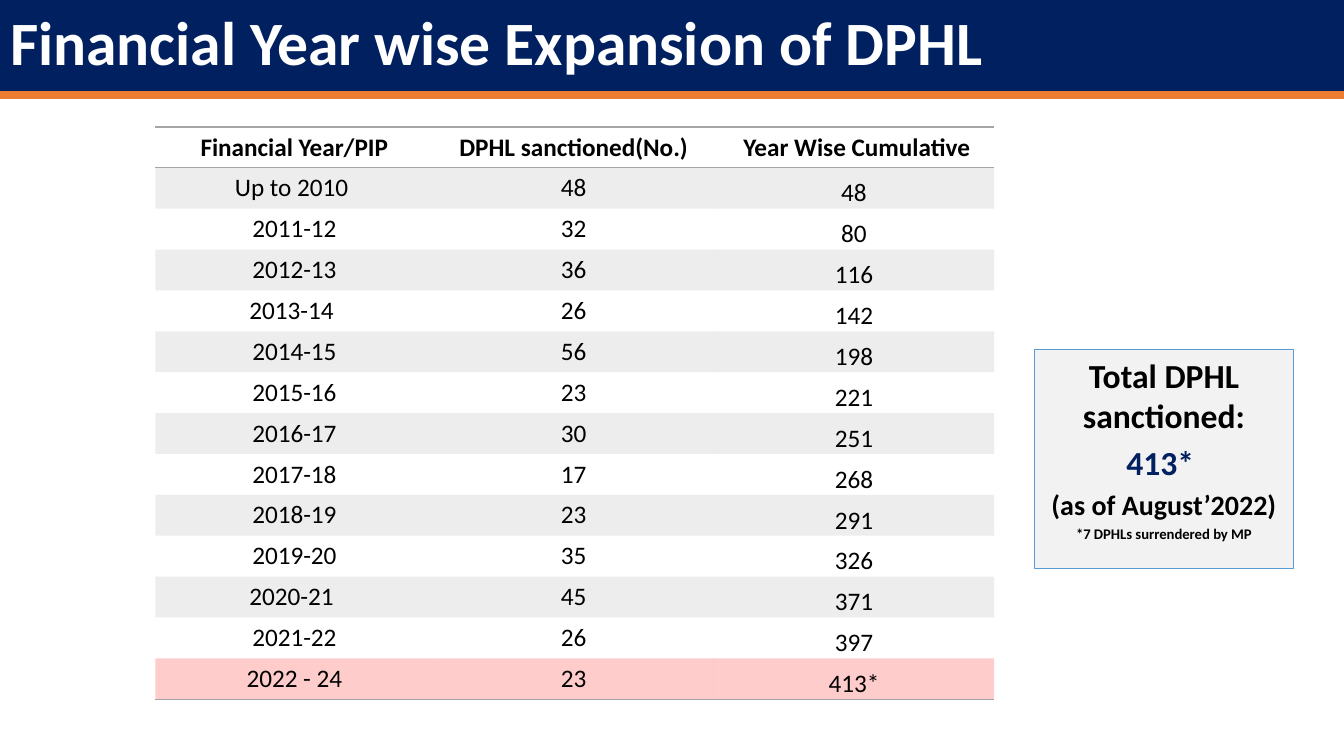
from lxml import etree
from pptx import Presentation
from pptx import util as u
from pptx.dml.color import RGBColor
from pptx.enum import shapes, text
from pptx.oxml.ns import qn

NAVY = RGBColor(0x00, 0x20, 0x60)
ORANGE = RGBColor(0xED, 0x7D, 0x31)
GREY = RGBColor(0xA5, 0xA5, 0xA5)
RED = RGBColor(0xFF, 0x00, 0x00)
PALE = RGBColor(0xF2, 0xF2, 0xF2)
BLUE = RGBColor(0x5B, 0x9B, 0xD5)
BLACK = RGBColor(0x00, 0x00, 0x00)
WHITE = RGBColor(0xFF, 0xFF, 0xFF)
PLAIN_TABLE_STYLE = "{2D5ABB26-0587-4C30-8999-92F81FD0307C}"


def write(para, words, size=18, color=BLACK, bold=False, align=text.PP_ALIGN.CENTER):
    para.alignment = align
    span = para.add_run()
    span.text = words
    span.font.name = "Calibri"
    span.font.size = u.Pt(size)
    span.font.bold = bold
    span.font.color.rgb = color


def add_border(cell, side):
    line = etree.Element(qn(f"a:{side}"), w=str(u.Pt(1)))
    fill = etree.SubElement(line, qn("a:solidFill"))
    etree.SubElement(fill, qn("a:srgbClr"), val=str(GREY))
    properties = cell._tc.get_or_add_tcPr()
    position = len(properties.findall(qn("a:lnT")))
    properties.insert(position, line)


deck = Presentation()
deck.slide_width = u.Inches(13.33)
deck.slide_height = u.Inches(7.5)
page = deck.slides.add_slide(deck.slide_layouts[5])

stripe = page.shapes.add_shape(
    shapes.MSO_SHAPE.RECTANGLE, 0, u.Inches(0.91), deck.slide_width, u.Inches(0.07))
stripe.shadow.inherit = False
stripe.fill.solid()
stripe.fill.fore_color.rgb = ORANGE
stripe.line.color.rgb = ORANGE
stripe.line.width = u.Pt(1)

title = page.shapes.title
title.left, title.top = 0, 0
title.width, title.height = u.Inches(13.48), u.Inches(0.91)
title.fill.solid()
title.fill.fore_color.rgb = NAVY
title.text_frame.vertical_anchor = text.MSO_ANCHOR.MIDDLE
title.text_frame.auto_size = text.MSO_AUTO_SIZE.NONE
heading = title.text_frame.paragraphs[0]
heading.line_spacing = 0.9
write(heading, "Financial Year wise Expansion of DPHL", size=44, color=WHITE,
      bold=True, align=text.PP_ALIGN.LEFT)

rows = [
    ("Financial Year/PIP", "DPHL sanctioned(No.)", " Year Wise Cumulative"),
    ("Up to 2010 ", "48", "48"),
    ("2011-12", "32", "80"),
    ("2012-13", "36", "116"),
    ("2013-14 ", "26", "142"),
    ("2014-15", "56", "198"),
    ("2015-16", "23", "221"),
    ("2016-17", "30", "251"),
    ("2017-18", "17", "268"),
    ("2018-19", "23", "291"),
    ("2019-20", "35", "326"),
    ("2020-21 ", "45", "371"),
    ("2021-22", "26", "397"),
    ("2022 - 24", "23", "413*"),
]
last = len(rows) - 1
frame = page.shapes.add_table(
    len(rows), 3, u.Inches(1.54), u.Inches(1.26), u.Inches(8.32), u.Inches(5.62))
table = frame.table
table.first_row = False
table.horz_banding = False
table._tbl.tblPr.find(qn("a:tableStyleId")).text = PLAIN_TABLE_STYLE
for column, width in zip(table.columns, (2.76, 2.78, 2.78)):
    column.width = u.Inches(width)

for r, values in enumerate(rows):
    table.rows[r].height = u.Inches(0.4)
    for c, value in enumerate(values):
        cell = table.cell(r, c)
        write(cell.text_frame.paragraphs[0], value, bold=r == 0)
        if r > 0 and c == 2:
            cell.vertical_anchor = text.MSO_ANCHOR.BOTTOM
            cell.margin_left = cell.margin_right = cell.margin_top = u.Inches(0.01)
            cell.margin_bottom = 0
        if r % 2 == 1:
            cell.fill.solid()
            cell.fill.fore_color.rgb = RED if r == last else GREY
            tint = cell._tc.tcPr.find(qn("a:solidFill")).find(qn("a:srgbClr"))
            etree.SubElement(tint, qn("a:alpha"), val="20000")
        else:
            cell.fill.background()
        if r == 0:
            add_border(cell, "lnT")
        if r in (0, last):
            add_border(cell, "lnB")

total = page.shapes.add_shape(
    shapes.MSO_SHAPE.RECTANGLE, u.Inches(10.26), u.Inches(3.47), u.Inches(2.57), u.Inches(2.17))
total.shadow.inherit = False
total.fill.solid()
total.fill.fore_color.rgb = PALE
total.line.color.rgb = BLUE
total.line.width = u.Pt(0.75)
box = total.text_frame
box.word_wrap = True
box.vertical_anchor = text.MSO_ANCHOR.TOP
notes = [
    ("Total DPHL sanctioned:", 24, BLACK),
    ("413* ", 24, NAVY),
    ("(as of August’2022)", 20, BLACK),
    ("*7 DPHLs surrendered by MP", 10.5, BLACK),
]
for i, (words, size, color) in enumerate(notes):
    para = box.add_paragraph() if i else box.paragraphs[0]
    para.space_before = u.Pt(0.2 * size if i else 0)
    write(para, words, size=size, color=color, bold=True)

deck.save("out.pptx")
